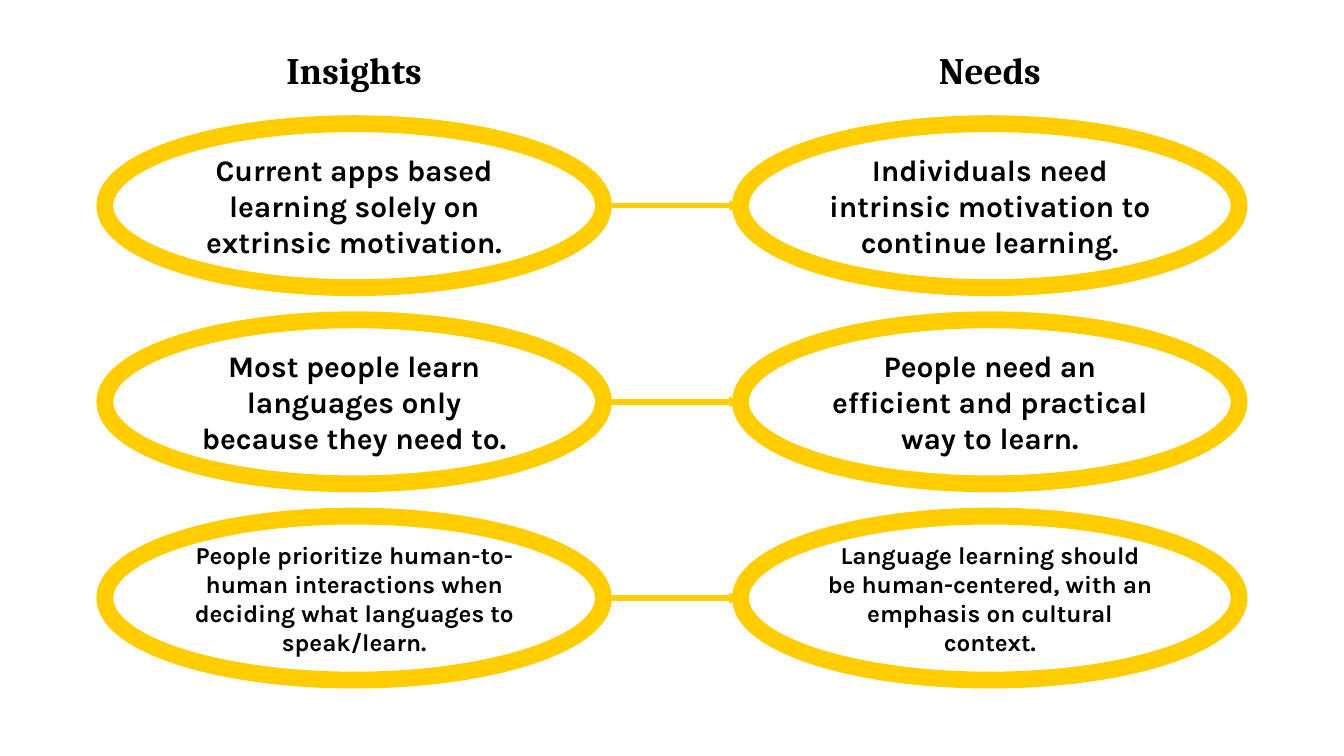
from dataclasses import dataclass

from lxml import etree
from pptx import Presentation
from pptx.dml.color import RGBColor
from pptx.enum.shapes import MSO_CONNECTOR, MSO_SHAPE
from pptx.enum.text import MSO_ANCHOR, MSO_AUTO_SIZE, PP_ALIGN
from pptx.oxml.ns import qn
from pptx.util import Inches, Pt

OVAL = MSO_SHAPE.OVAL
STRAIGHT = MSO_CONNECTOR.STRAIGHT
MIDDLE = MSO_ANCHOR.MIDDLE
NO_AUTOFIT = MSO_AUTO_SIZE.NONE
CENTER = PP_ALIGN.CENTER


@dataclass(frozen=True)
class Theme:
    yellow: RGBColor = RGBColor(0xFF, 0xCD, 0x00)
    black: RGBColor = RGBColor(0, 0, 0)
    heading_font: str = "Cambria"
    body_font: str = "Karla"
    heading: int = 20
    body: int = 16
    small: int = 13
    ring: int = 9
    arrow: int = 3


THEME = Theme()

INSIGHT_X, NEED_X = 0.78, 5.51
OVAL_W, OVAL_H = 3.71, 1.22
TOP, ROW_STEP = 0.92, 1.46
HEADING_Y, HEADING_H = 0.28, 0.48

ROWS = [
    ("Current apps based learning solely on extrinsic motivation.",
     "Individuals need intrinsic motivation to continue learning.", THEME.body),
    ("Most people learn languages only because they need to.",
     "People need an efficient and practical way to learn.", THEME.body),
    ("People prioritize human-to-human interactions when deciding what languages to speak/learn.",
     "Language learning should be human-centered, with an emphasis on cultural context.",
     THEME.small),
]


def set_text(shape, text, font, size):
    tf = shape.text_frame
    tf.word_wrap = True
    tf.auto_size = NO_AUTOFIT
    tf.vertical_anchor = MIDDLE
    tf.margin_left = tf.margin_right = tf.margin_top = tf.margin_bottom = Inches(0.1)
    p = tf.paragraphs[0]
    p.text = text
    p.alignment = CENTER
    p.font.name = font
    p.font.size = Pt(size)
    p.font.bold = True
    p.font.color.rgb = THEME.black


def place_heading(shape, text, column_x, width):
    shape.left = Inches(column_x + (OVAL_W - width) / 2)
    shape.top = Inches(HEADING_Y)
    shape.width, shape.height = Inches(width), Inches(HEADING_H)
    set_text(shape, text, THEME.heading_font, THEME.heading)


def add_oval(s, x, y, text, size):
    sp = s.shapes.add_shape(OVAL, Inches(x), Inches(y), Inches(OVAL_W), Inches(OVAL_H))
    sp.shadow.inherit = False
    sp.fill.background()
    sp.line.color.rgb = THEME.yellow
    sp.line.width = Pt(THEME.ring)
    set_text(sp, text, THEME.body_font, size)


def add_arrow(s, x1, x2, y):
    arrow = s.shapes.add_connector(STRAIGHT, Inches(x1), Inches(y), Inches(x2), Inches(y))
    arrow.line.color.rgb = THEME.yellow
    arrow.line.width = Pt(THEME.arrow)
    ln = arrow.line._get_or_add_ln()
    etree.SubElement(ln, qn("a:tailEnd"), type="triangle", w="sm", len="sm")
    etree.SubElement(arrow._element.spPr, qn("a:effectLst"))


def main():
    prs = Presentation()
    prs.slide_width = Inches(10)
    prs.slide_height = prs.slide_width * 9 // 16
    s = prs.slides.add_slide(prs.slide_layouts[5])

    place_heading(s.shapes.title, "Insights", INSIGHT_X, 1.36)
    place_heading(s.shapes.add_textbox(0, 0, 0, 0), "Needs", NEED_X, 1.05)

    for i, (insight, need, size) in enumerate(ROWS):
        y = TOP + i * ROW_STEP
        add_oval(s, INSIGHT_X, y, insight, size)
        add_oval(s, NEED_X, y, need, size)
        add_arrow(s, INSIGHT_X + OVAL_W, NEED_X, y + OVAL_H / 2)

    prs.save("out.pptx")


if __name__ == "__main__":
    main()
